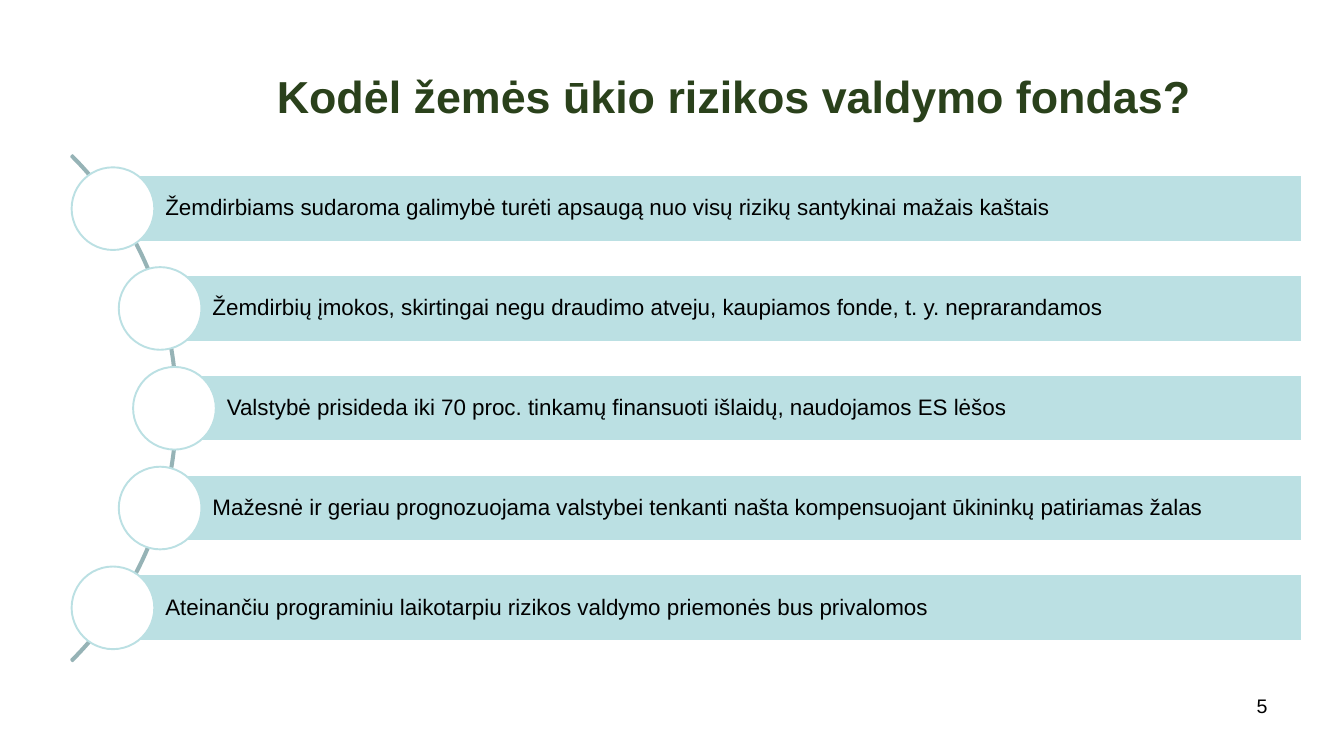
from dataclasses import dataclass
from math import sqrt

from pptx import Presentation
from pptx import util as u
from pptx.dml.color import RGBColor
from pptx.enum import shapes, text


@dataclass(frozen=True)
class Theme:
    font: str = "Arial"
    title: RGBColor = RGBColor(0x2A, 0x41, 0x1B)
    ink: RGBColor = RGBColor(0, 0, 0)
    paper: RGBColor = RGBColor(255, 255, 255)
    bar: RGBColor = RGBColor(0xBB, 0xE0, 0xE3)
    arc: RGBColor = RGBColor(0x96, 0xB3, 0xB6)
    title_size: int = 32
    body_size: int = 16
    number_size: int = 14
    outline: float = 1.35


theme = Theme()
SHAPE = shapes.MSO_SHAPE


def add_outlined(kind, left, top, width, height, fill, line):
    shape = page.shapes.add_shape(kind, *map(u.Inches, (left, top, width, height)))
    shape.shadow.inherit = False
    if fill is None:
        shape.fill.background()
    else:
        shape.fill.solid()
        shape.fill.fore_color.rgb = fill
    shape.line.color.rgb = line
    shape.line.width = u.Pt(theme.outline)
    return shape


def write(box, words, size, color, align, anchor, bold=False):
    frame = box.text_frame
    frame.word_wrap = True
    frame.vertical_anchor = anchor
    frame.text = words
    para = frame.paragraphs[0]
    para.alignment = align
    font = para.runs[0].font
    font.name, font.size, font.bold = theme.font, u.Pt(size), bold
    font.color.rgb = color
    return para


deck = Presentation()
deck.slide_width, deck.slide_height = u.Inches(13.33), u.Inches(7.5)
page = deck.slides.add_slide(deck.slide_layouts[6])

# Title and slide number
title = page.shapes.add_textbox(*map(u.Inches, (1.36, 0.53, 11.97, 0.83)))
write(title, "Kodėl žemės ūkio rizikos valdymo fondas? ", theme.title_size, theme.title,
      text.PP_ALIGN.CENTER, text.MSO_ANCHOR.MIDDLE, bold=True)
number = page.shapes.add_textbox(*map(u.Inches, (9.56, 6.83, 3.11, 0.52)))
write(number, "5", theme.number_size, theme.ink,
      text.PP_ALIGN.RIGHT, text.MSO_ANCHOR.TOP)

# Arc spanning 45 degrees either side of horizontal
center_x, center_y, arc_size = -1.79, 4.05, 7.1
arc = add_outlined(SHAPE.BLOCK_ARC, center_x - arc_size / 2, center_y - arc_size / 2,
                   arc_size, arc_size, None, theme.arc)
for index, value in enumerate((189, 27, 0.003)):
    arc.adjustments[index] = value

# Bars start at the centres of their circles, which follow the arc
reasons = [
    "Žemdirbiams sudaroma galimybė turėti apsaugą nuo visų rizikų santykinai mažais kaštais",
    "Žemdirbių įmokos, skirtingai negu draudimo atveju, kaupiamos fonde, t. y. neprarandamos",
    "Valstybė prisideda iki 70 proc. tinkamų finansuoti išlaidų, naudojamos ES lėšos",
    "Mažesnė ir geriau prognozuojama valstybei tenkanti našta kompensuojant ūkininkų patiriamas žalas",
    "Ateinančiu programiniu laikotarpiu rizikos valdymo priemonės bus privalomos",
]
track_radius, row_pitch = 3.52, 0.99
bar_right, bar_height, circle_size = 12.91, 0.66, 0.82

for row, reason in enumerate(reasons):
    offset = (row - len(reasons) // 2) * row_pitch
    x = center_x + sqrt(track_radius ** 2 - offset ** 2)
    y = center_y + offset
    bar = add_outlined(SHAPE.RECTANGLE, x, y - bar_height / 2, bar_right - x, bar_height,
                       theme.bar, theme.paper)
    frame = bar.text_frame
    frame.margin_left = u.Inches(0.52)
    frame.margin_top = frame.margin_right = frame.margin_bottom = u.Inches(0.04)
    para = write(bar, reason, theme.body_size, theme.ink,
                 text.PP_ALIGN.LEFT, text.MSO_ANCHOR.MIDDLE)
    para.line_spacing = 0.9
    add_outlined(SHAPE.OVAL, x - circle_size / 2, y - circle_size / 2,
                 circle_size, circle_size, theme.paper, theme.bar)

deck.save("out.pptx")
